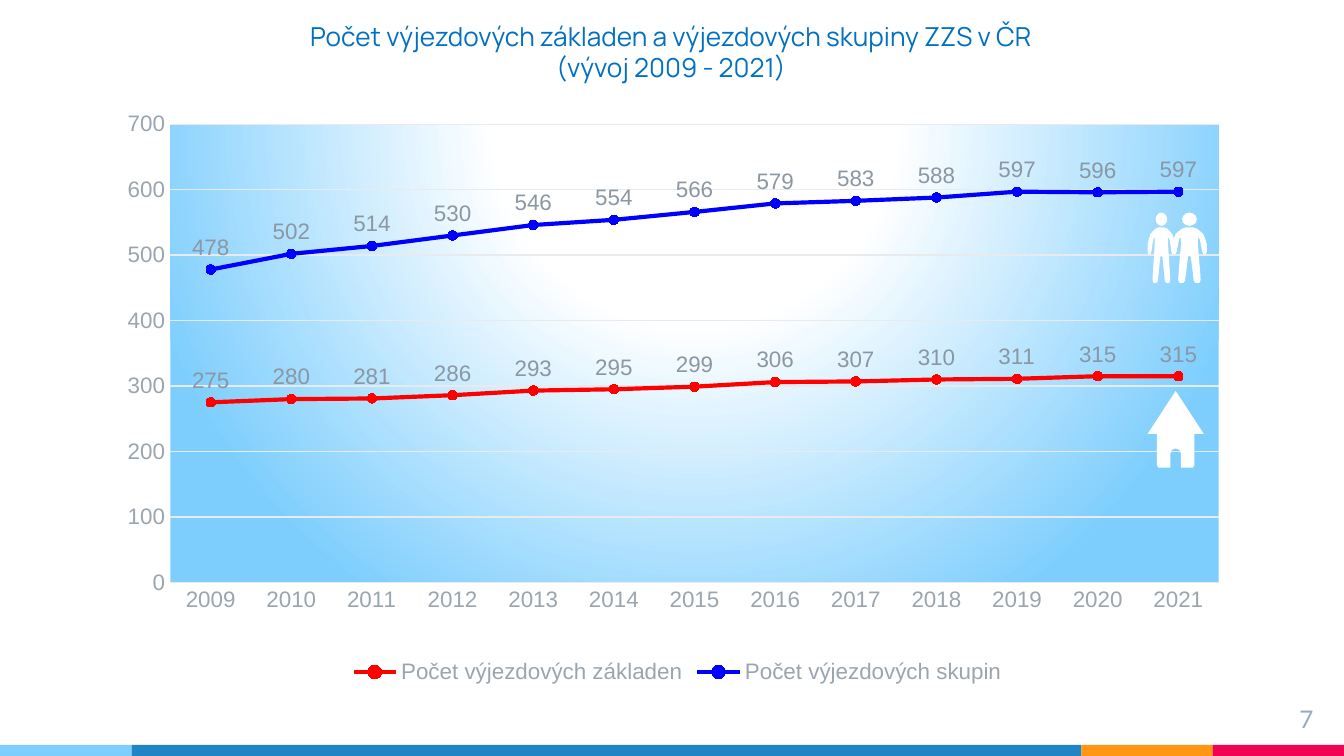
import pptx
import pptx.chart.data
import pptx.dml.color
import pptx.enum.chart
import pptx.enum.shapes
import pptx.enum.text
import pptx.oxml
import pptx.oxml.ns
import pptx.util

Cm = pptx.util.Cm
Pt = pptx.util.Pt
RGBColor = pptx.dml.color.RGBColor
Align = pptx.enum.text.PP_ALIGN
Shape = pptx.enum.shapes.MSO_SHAPE

WHITE = RGBColor(0xFF, 0xFF, 0xFF)
SKY = RGBColor(0x7E, 0xCE, 0xFD)
OCEAN = RGBColor(0x21, 0x85, 0xC5)
ORANGE = RGBColor(0xFF, 0x97, 0x15)
CRIMSON = RGBColor(0xF2, 0x02, 0x53)
TITLE_BLUE = RGBColor(0x00, 0x70, 0xC0)
PAGE_GRAY = RGBColor(0x97, 0xAB, 0xBC)
CHART_GRAY = RGBColor(0x67, 0x74, 0x80)
AXIS_GRAY = RGBColor(0x9B, 0xA5, 0xAE)
LABEL_GRAY = RGBColor(0x8B, 0x97, 0xA2)
GRID_GRAY = RGBColor(0xE8, 0xEA, 0xEC)
RED = RGBColor(0xFF, 0x00, 0x00)
BLUE = RGBColor(0x00, 0x00, 0xFF)

YEARS = [str(year) for year in range(2009, 2022)]
BASES = [275, 280, 281, 286, 293, 295, 299, 306, 307, 310, 311, 315, 315]
CREWS = [478, 502, 514, 530, 546, 554, 566, 579, 583, 588, 597, 596, 597]

HOUSE = [(0, 0), (1, 0.56), (0.67, 0.56), (0.67, 0.96), (0.62, 1),
         (0.19, 1), (0.19, 0.82), (0.14, 0.77), (0, 0.75)]
BODY = [(0.2, 0), (0.42, 0.02), (0.62, 0.07), (0.8, 0.12), (0.92, 0.22),
        (1, 0.31), (1, 0.43), (0.95, 0.48), (0.8, 0.48), (0.72, 0.43),
        (0.68, 0.36), (0.6, 0.22), (0.5, 0.17), (0.48, 0.29), (0.62, 0.82),
        (0.64, 0.94), (0.6, 0.99), (0.5, 1), (0.35, 1), (0.25, 0.96),
        (0.08, 0.53), (0, 0.51)]

PLOT_LAYOUT = """<c:layout %s><c:manualLayout><c:layoutTarget val="inner"/>
<c:xMode val="edge"/><c:yMode val="edge"/><c:x val="0.054"/><c:y val="0.022"/>
<c:w val="0.922"/><c:h val="0.793"/></c:manualLayout></c:layout>"""
PLOT_FILL = """<c:spPr %s><a:gradFill><a:gsLst>
<a:gs pos="0"><a:srgbClr val="FFFFFF"/></a:gs>
<a:gs pos="35000"><a:srgbClr val="FFFFFF"/></a:gs>
<a:gs pos="100000"><a:srgbClr val="7ECEFD"/></a:gs></a:gsLst>
<a:path path="circle"><a:fillToRect l="50000" t="-80000" r="50000" b="180000"/></a:path>
</a:gradFill><a:ln><a:noFill/></a:ln></c:spPr>"""


class SlideBuilder:
    def __init__(self, slide):
        self.slide = slide

    def font(self, font, name, size, color):
        font.name, font.size = name, Pt(size)
        font.color.rgb = color

    def paint(self, shape, color):
        shape.shadow.inherit = False
        shape.fill.solid()
        shape.fill.fore_color.rgb = color
        shape.line.fill.background()

    def bar(self, left, width, color):
        self.paint(self.slide.shapes.add_shape(
            Shape.RECTANGLE, Cm(left), Cm(14.08), Cm(width), Cm(0.21)), color)

    def text(self, box, lines, align, name, size, color, inset):
        frame = self.slide.shapes.add_textbox(*map(Cm, box)).text_frame
        frame.word_wrap = True
        frame.margin_top = frame.margin_bottom = Cm(inset)
        frame.text = "\n".join(lines)
        for paragraph in frame.paragraphs:
            paragraph.alignment = align
            self.font(paragraph.font, name, size, color)

    def mirrored(self, shapes, center, top, half_width, height, half):
        outline = half + [(-x, y) for x, y in reversed(half)]
        points = [(Cm(center + x * half_width), Cm(top + y * height))
                  for x, y in outline]
        builder = shapes.build_freeform(*points[0])
        builder.add_line_segments(points[1:], close=True)
        self.paint(builder.convert_to_shape(), WHITE)

    def house(self):
        self.mirrored(self.slide.shapes, 22.22, 7.39, 0.53, 1.45, HOUSE)

    def person(self, center, half_width, head_width):
        shapes = self.slide.shapes.add_group_shape().shapes
        self.mirrored(shapes, center, 4.3, half_width, 1.05, BODY)
        self.paint(shapes.add_shape(
            Shape.OVAL, Cm(center - head_width / 2), Cm(4.02),
            Cm(head_width), Cm(0.25)), WHITE)

    def line_chart(self, box, categories, series_styles):
        data = pptx.chart.data.CategoryChartData()
        data.categories = categories
        for name, values, _, _ in series_styles:
            data.add_series(name, values)
        chart = self.slide.shapes.add_chart(
            pptx.enum.chart.XL_CHART_TYPE.LINE_MARKERS, *map(Cm, box), data).chart
        self.font(chart.font, "Arial", 10, CHART_GRAY)
        chart.has_title = False
        chart.has_legend = True
        chart.legend.position = pptx.enum.chart.XL_LEGEND_POSITION.BOTTOM
        chart.legend.include_in_layout = False
        self.font(chart.legend.font, "Arial", 12, AXIS_GRAY)
        self.axes(chart)
        chart.plots[0].vary_by_categories = False
        for series, (_, _, color, marker_color) in zip(chart.plots[0].series, series_styles):
            self.series(series, color, marker_color)
        self.plot_area(chart)

    def axes(self, chart):
        for axis in (chart.category_axis, chart.value_axis):
            axis.major_tick_mark = pptx.enum.chart.XL_TICK_MARK.NONE
            axis.minor_tick_mark = pptx.enum.chart.XL_TICK_MARK.NONE
            self.font(axis.tick_labels.font, "Arial", 12, AXIS_GRAY)
        values = chart.value_axis
        values.minimum_scale, values.maximum_scale, values.major_unit = 0, 700, 100
        values.format.line.fill.background()
        for line in (chart.category_axis.format.line, values.major_gridlines.format.line):
            line.color.rgb = GRID_GRAY
            line.width = Pt(0.75)

    def series(self, series, color, marker_color):
        series.smooth = False
        series.format.line.color.rgb = color
        series.format.line.width = Pt(2.25)
        series.marker.style = pptx.enum.chart.XL_MARKER_STYLE.CIRCLE
        series.marker.size = 5
        series.marker.format.fill.solid()
        series.marker.format.fill.fore_color.rgb = marker_color
        series.marker.format.line.color.rgb = color
        labels = series.data_labels
        labels.show_value = True
        labels.position = pptx.enum.chart.XL_LABEL_POSITION.ABOVE
        self.font(labels.font, "Arial", 12, LABEL_GRAY)

    def plot_area(self, chart):
        area = chart._chartSpace.chart.plotArea
        for layout in area.findall(pptx.oxml.ns.qn("c:layout")):
            area.remove(layout)
        namespaces = pptx.oxml.ns.nsdecls("c", "a")
        area.insert(0, pptx.oxml.parse_xml(PLOT_LAYOUT % namespaces))
        area.append(pptx.oxml.parse_xml(PLOT_FILL % namespaces))


def main():
    deck = pptx.Presentation()
    deck.slide_width, deck.slide_height = Cm(25.4), Cm(14.29)
    page = SlideBuilder(deck.slides.add_slide(deck.slide_layouts[6]))

    left = 0
    for width, color in ((2.49, SKY), (17.95, OCEAN), (2.48, ORANGE), (2.48, CRIMSON)):
        page.bar(left, width, color)
        left += width

    page.text((23.55, 13.06, 1.52, 0.86), ["7"], Align.RIGHT, "Lato", 13, PAGE_GRAY, 0.25)
    page.text((5.08, 0.25, 15.21, 1.45),
              ["Počet výjezdových základen a výjezdových skupiny ZZS v ČR",
               "(vývoj 2009 - 2021)"],
              Align.CENTER, "Manrope", 14, TITLE_BLUE, 0.13)
    page.line_chart((2.06, 2.11, 21.49, 10.92), YEARS,
                    [("Počet výjezdových základen", BASES, RED, OCEAN),
                     ("Počet výjezdových skupin", CREWS, BLUE, SKY)])
    page.house()
    page.person(21.95, 0.26, 0.22)
    page.person(22.48, 0.33, 0.28)
    deck.save("out.pptx")


if __name__ == "__main__":
    main()
